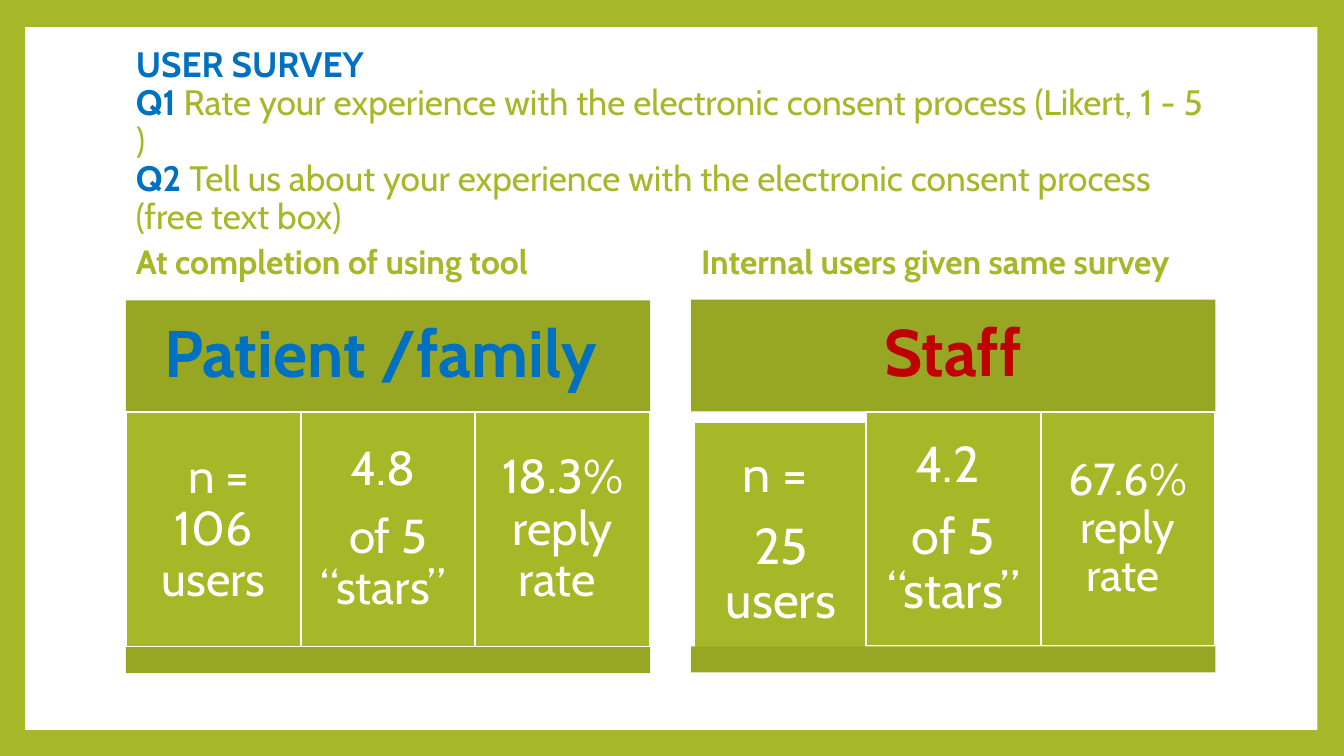
from pptx import Presentation
from pptx.dml.color import RGBColor
from pptx.enum.shapes import MSO_SHAPE
from pptx.enum.text import MSO_ANCHOR, PP_ALIGN
from pptx.util import Pt

GREEN, DARK_GREEN, WHITE = "A6B727", "97A623", "FFFFFF"
BLUE, RED = "0070C0", "C00000"
PANEL_WIDTH, TILE_HEIGHT = 374.4, 167.8
TILE_WIDTH = PANEL_WIDTH / 3


def color(hex_string):
    return RGBColor.from_string(hex_string)


def add_box(left, top, width, height, fill=None, line=None, text="", size=24,
            font_color=WHITE, bold=False, inset=None):
    if fill:
        shape = slide.shapes.add_shape(
            MSO_SHAPE.RECTANGLE, Pt(left), Pt(top), Pt(width), Pt(height))
        shape.shadow.inherit = False
        shape.fill.solid()
        shape.fill.fore_color.rgb = color(fill)
        if line:
            shape.line.color.rgb = color(line)
            shape.line.width = Pt(1.5)
        else:
            shape.line.fill.background()
    else:
        shape = slide.shapes.add_textbox(Pt(left), Pt(top), Pt(width), Pt(height))
    frame = shape.text_frame
    frame.word_wrap = True
    frame.vertical_anchor = MSO_ANCHOR.MIDDLE
    if inset:
        frame.margin_left = frame.margin_right = Pt(inset)
        frame.margin_top = frame.margin_bottom = Pt(inset)
    frame.text = text
    for paragraph in frame.paragraphs:
        paragraph.line_spacing = 0.9
        if fill:
            paragraph.alignment = PP_ALIGN.CENTER
            paragraph.space_after = Pt(round(size * 0.35, 1))
        for run in paragraph.runs:
            run.font.name = "Cabin"
            run.font.size = Pt(size)
            run.font.bold = bold
            run.font.color.rgb = color(font_color)
    return shape


presentation = Presentation()
presentation.slide_width, presentation.slide_height = Pt(960), Pt(540)
slide = presentation.slides.add_slide(presentation.slide_layouts[6])

# Green frame around a white page
slide.background.fill.solid()
slide.background.fill.fore_color.rgb = color(GREEN)
add_box(18, 19.3, 923, 502, WHITE)

# Survey questions
title = add_box(90, 48.2, 777.6, 106.6)
paragraph = title.text_frame.paragraphs[0]
questions = [
    ("USER SURVEY ", ""),
    ("Q1", " Rate your experience with the electronic consent process (Likert, 1 - 5 )"),
    ("Q2", " Tell us about your experience with the electronic consent process (free text box)"),
]
for index, (label, question) in enumerate(questions):
    if index:
        paragraph.add_line_break()
    for text, font_color, bold in ((label, BLUE, True), (question, GREEN, False)):
        if text:
            run = paragraph.add_run()
            run.text = text
            run.font.name = "Cabin"
            run.font.size = Pt(25.2)
            run.font.bold = bold
            run.font.color.rgb = color(font_color)

# Result panels: left, top, caption, heading, heading colour, tiles
# Each tile: text, size, inset, shift right, shift down
panels = [
    (90, 214.5, "At completion of using tool ", "Patient /family ", BLUE, [
        (" n = 106 users", 34, 10.2, 0, 0),
        ("4.8 \nof 5 “stars” ", 34, 10.2, 0, 0),
        ("18.3% reply rate ", 34, 10.2, 0, 0)]),
    (493.7, 214, "Internal users given same survey ", "Staff", RED, [
        ("n = \n25 users", 36, 10.8, 1.7, 7.2),
        ("4.2 \nof 5 “stars”", 36, 10.8, 0, 0),
        ("67.6% reply rate ", 32, 9.6, 0, 0)]),
]
for left, top, caption, heading, heading_color, tiles in panels:
    add_box(left, 157.7, PANEL_WIDTH, 61.2, text=caption, font_color=GREEN, bold=True)
    add_box(left, top, PANEL_WIDTH, 80, DARK_GREEN, text=heading, size=47,
            font_color=heading_color, bold=True, inset=14.4)
    for column, (text, size, inset, right, down) in enumerate(tiles):
        add_box(left + column * TILE_WIDTH + right, top + 80 + down, TILE_WIDTH,
                TILE_HEIGHT, GREEN, WHITE, text, size, inset=inset)
    add_box(left, top + 80 + TILE_HEIGHT, PANEL_WIDTH, 18.6, DARK_GREEN)

presentation.save("out.pptx")
